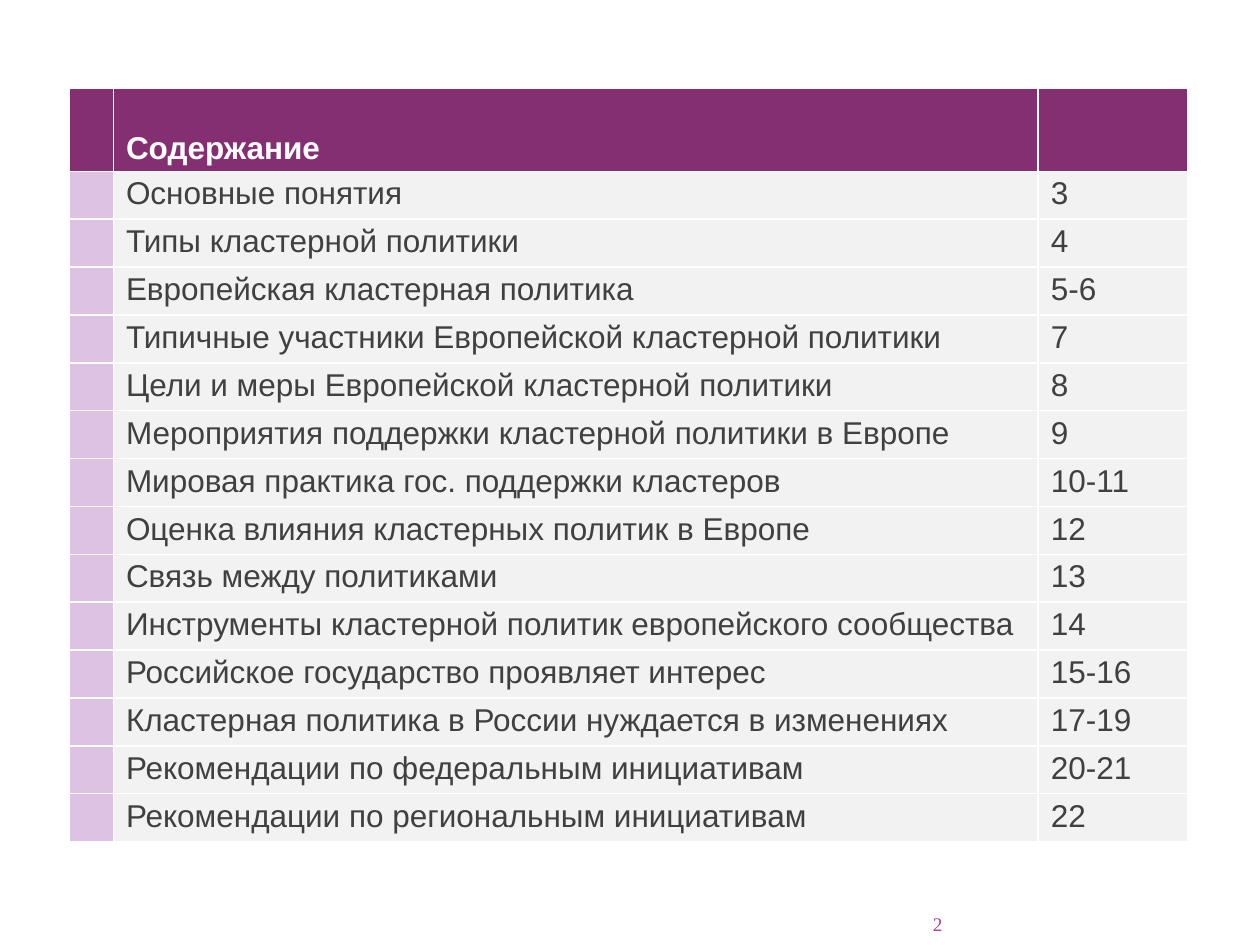
import pptx
import pptx.util
import pptx.dml.color
import pptx.enum.text

HEAD = "Содержание"
ITEMS = [
    ("Основные понятия", "3"),
    ("Типы кластерной политики", "4"),
    ("Европейская кластерная политика", "5-6"),
    ("Типичные участники Европейской кластерной политики", "7"),
    ("Цели и меры Европейской кластерной политики", "8"),
    ("Мероприятия поддержки кластерной политики в Европе", "9"),
    ("Мировая практика гос. поддержки кластеров", "10-11"),
    ("Оценка влияния кластерных политик в Европе", "12"),
    ("Связь между политиками", "13"),
    ("Инструменты кластерной политик европейского сообщества", "14"),
    ("Российское государство проявляет интерес", "15-16"),
    ("Кластерная политика в России нуждается в изменениях", "17-19"),
    ("Рекомендации по федеральным инициативам", "20-21"),
    ("Рекомендации по региональным инициативам", "22"),
]
PAGE = "2"

Inch = pptx.util.Inches
Pt = pptx.util.Pt
Anchor = pptx.enum.text.MSO_ANCHOR

WIDE, HIGH = 10, 7.5
LEFT, TOP = 0.55, 0.7
COLS = [0.35, 7.34, 1.19]
HEAD_H, ROW_H = 0.66, 0.38
HEAD_FILLS = ["852F73"] * 3
ROW_FILLS = ["DEC2E4", "F2F2F2", "F2F2F2"]

HEAD_FONT = {"name": "Arial", "size": Pt(18), "bold": True, "color": "FFFFFF"}
ROW_FONT = {"name": "Arial", "size": Pt(18), "bold": False, "color": "404040"}
PAGE_FONT = {"name": "Times New Roman", "size": Pt(11), "color": "B13F9A"}
CELL = {
    "margin_left": Inch(0.1),
    "margin_right": Inch(0.1),
    "margin_top": Inch(0.04),
    "margin_bottom": Inch(0.04),
}
FRAME = {
    "margin_left": 0,
    "margin_right": 0,
    "margin_top": 0,
    "margin_bottom": 0,
    "word_wrap": True,
    "vertical_anchor": Anchor.BOTTOM,
}


def paint(form, tone):
    form.rgb = pptx.dml.color.RGBColor.from_string(tone)


def apply(item, form):
    for key, val in form.items():
        if key == "color":
            paint(item.color, val)
        else:
            setattr(item, key, val)


def write(para, text, font):
    para.text = text
    apply(para.font, font)
    for run in para.runs:
        apply(run.font, font)


def add_list(slide):
    rows = [("", HEAD, "")] + [("", name, page) for name, page in ITEMS]
    high = HEAD_H + ROW_H * len(ITEMS)
    table = slide.shapes.add_table(
        len(rows), len(COLS), Inch(LEFT), Inch(TOP), Inch(sum(COLS)), Inch(high)
    ).table
    table.horz_banding = False
    for col, wide in zip(table.columns, COLS):
        col.width = Inch(wide)
    for num, texts in enumerate(rows):
        top = num == 0
        table.rows[num].height = Inch(HEAD_H if top else ROW_H)
        fills = HEAD_FILLS if top else ROW_FILLS
        font = HEAD_FONT if top else ROW_FONT
        for cell, text, tone in zip(table.rows[num].cells, texts, fills):
            apply(cell, CELL)
            cell.vertical_anchor = Anchor.BOTTOM if top else Anchor.TOP
            cell.fill.solid()
            paint(cell.fill.fore_color, tone)
            write(cell.text_frame.paragraphs[0], text, font)


def add_page(slide):
    box = slide.shapes.add_textbox(Inch(6.84), Inch(7.17), Inch(0.64), Inch(0.25))
    apply(box.text_frame, FRAME)
    para = box.text_frame.paragraphs[0]
    para.alignment = pptx.enum.text.PP_ALIGN.RIGHT
    write(para, PAGE, PAGE_FONT)


def main():
    deck = pptx.Presentation()
    deck.slide_width, deck.slide_height = Inch(WIDE), Inch(HIGH)
    slide = deck.slides.add_slide(deck.slide_layouts[6])
    add_list(slide)
    add_page(slide)
    deck.save("out.pptx")


if __name__ == "__main__":
    main()
